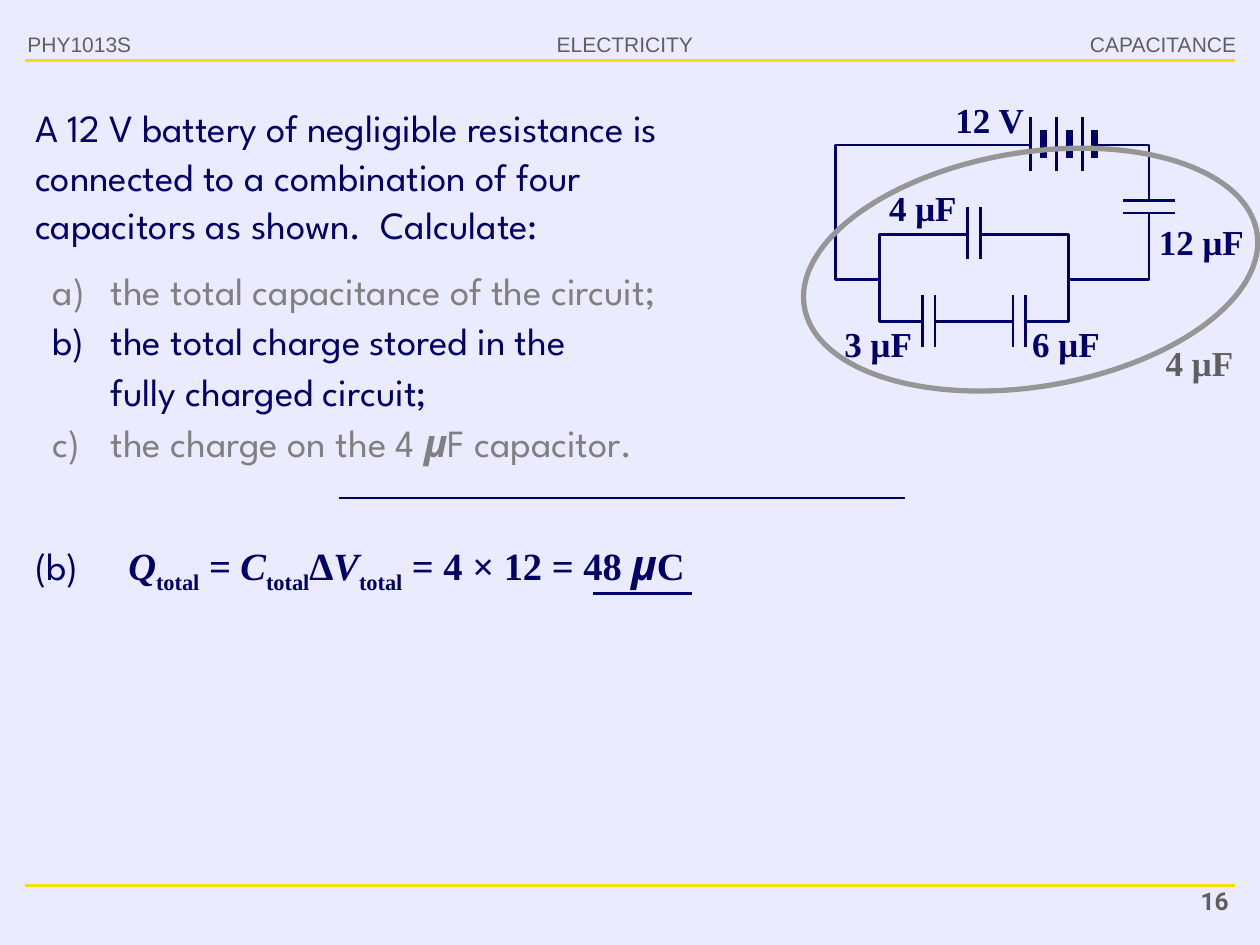
"""Build a physics slide: charge stored in a network of four capacitors."""
from lxml.etree import SubElement
from pptx import Presentation
from pptx.dml.color import RGBColor
from pptx.enum.shapes import MSO_CONNECTOR as Connector, MSO_SHAPE as Shape
from pptx.enum.text import PP_ALIGN as Align
from pptx.oxml.ns import qn
from pptx.util import Inches, Pt

COLORS = {"background": "EBEBFF", "navy": "000066", "yellow": "F8DC0E",
          "dim": "808080", "label": "5F5F5F", "ring": "969696"}
SPARTAN, TIMES = "League Spartan", "Times New Roman"

HEADERS = [("ELECTRICITY", (4.16, 0.2, 1.6, 0.3), Align.CENTER),
           ("CAPACITANCE", (8.31, 0.2, 1.6, 0.3), Align.RIGHT),
           ("PHY1013S", (0.12, 0.2, 1.6, 0.3), Align.LEFT)]
QUESTION = ("A 12 V battery of negligible resistance is connected to a "
            "combination of four capacitors as shown.  Calculate:")
DIM = {"color": "dim"}
PARTS = [
    [("the total capacitance of the circuit;", DIM)],
    [("the total charge stored in the ", {}), ("\n", {}), ("fully charged circuit;", {})],
    [("the charge on the 4\u00a0", DIM), ("μ", {"color": "dim", "bold": True, "italic": True}),
     ("F capacitor.", DIM)],
]
ITALIC, SUBSCRIPT = {"italic": True}, {"baseline": -25000}
EQUATION = [("Q", ITALIC), ("total", SUBSCRIPT), (" = C", ITALIC), ("total", SUBSCRIPT),
            ("Δ", {}), ("V", ITALIC), ("total", SUBSCRIPT), (" = 4 × 12 = 48 ", {}),
            ("μ", {"size": 24, "font": SPARTAN, "italic": True}), ("C", {})]
CIRCUIT_LABELS = [("12 μF", (9.07, 1.71, 0.93, 0.44), "navy"),
                  ("12 V", (7.51, 0.74, 0.69, 0.44), "navy"),
                  ("4 μF", (6.91, 1.44, 0.83, 0.44), "navy"),
                  ("3 μF", (6.56, 2.52, 0.82, 0.44), "navy"),
                  ("6 μF", (8.05, 2.52, 0.82, 0.44), "navy"),
                  ("4 μF", (9.11, 2.67, 0.82, 0.45), "label")]

BATTERY_LEFT, BATTERY_STEP, BATTERY_CELLS = 8.18, 0.205, 3
PLATE_GAP, PLATE_LENGTH = 0.1, 0.41
CAPACITORS = [(9.12, 1.64, "vertical"), (8.09, 2.55, "horizontal"),
              (7.73, 1.85, "horizontal"), (7.37, 2.55, "horizontal")]
WIRES = [
    [(8.19, 1.15), (6.63, 1.15), (6.63, 2.22), (6.98, 2.22), (6.98, 2.55), (7.32, 2.55)],
    [(8.7, 1.15), (9.12, 1.15), (9.12, 1.58)],
    [(9.12, 1.69), (9.12, 2.22), (8.48, 2.22), (8.48, 2.55), (8.14, 2.55)],
    [(6.98, 2.22), (6.98, 1.86), (7.67, 1.86)],
    [(8.48, 2.22), (8.48, 1.86), (7.78, 1.86)],
]
RULES = [((0.2, 0.48), (9.8, 0.48), "yellow", 1.75),
         ((0.2, 7.03), (9.8, 7.03), "yellow", 1.75),
         ((2.69, 3.95), (7.18, 3.95), "navy", 1.25),
         ((4.71, 4.71), (5.49, 4.71), "navy", 2),
         ((7.42, 2.55), (8.03, 2.55), "navy", 1.5)]


def rgb(name):
    return RGBColor.from_string(COLORS[name])


def format_run(run, size, font, color, bold=False, italic=False, baseline=None):
    run.font.size, run.font.name = Pt(size), font
    run.font.bold, run.font.italic = bold, italic
    run.font.color.rgb = rgb(color)
    if baseline:
        run.font._element.set("baseline", str(baseline))


def add_text(slide, box, paragraphs, align=Align.LEFT, spacing=1.0, margins=(0.1, 0.05),
             wrap=True, lettered=False, **style):
    frame = slide.shapes.add_textbox(*map(Inches, box)).text_frame
    frame.word_wrap = wrap
    frame.margin_left = frame.margin_right = Inches(margins[0])
    frame.margin_top = frame.margin_bottom = Inches(margins[1])
    for index, runs in enumerate(paragraphs):
        paragraph = frame.add_paragraph() if index else frame.paragraphs[0]
        paragraph.alignment, paragraph.line_spacing = align, spacing
        if lettered:
            paragraph.level = 1
            properties = paragraph._p.get_or_add_pPr()
            properties.set("marL", str(Inches(0.65)))
            properties.set("indent", str(Inches(-0.46)))
            SubElement(properties, qn("a:buFont"), typeface=style["font"])
            SubElement(properties, qn("a:buAutoNum"), type="alphaLcParenR")
        for text, changes in runs:
            if text == "\n":
                paragraph.add_line_break()
                continue
            run = paragraph.add_run()
            run.text = text
            format_run(run, **{**style, **changes})


def add_line(slide, start, end, color="navy", width=1.5):
    line = slide.shapes.add_connector(Connector.STRAIGHT, *map(Inches, (*start, *end)))
    line.line.color.rgb, line.line.width = rgb(color), Pt(width)
    SubElement(line._element.spPr, qn("a:effectLst"))


def outline(shape, color, width):
    shape.shadow.inherit = False
    shape.fill.background()
    shape.line.color.rgb, shape.line.width = rgb(color), Pt(width)


def add_wire(slide, points):
    corners = [tuple(map(Inches, point)) for point in points]
    builder = slide.shapes.build_freeform(*corners[0])
    builder.add_line_segments(corners[1:], close=False)
    outline(builder.convert_to_shape(), "navy", 1.5)


def add_capacitor(slide, x, y, direction):
    half = PLATE_LENGTH / 2
    for offset in (-PLATE_GAP / 2, PLATE_GAP / 2):
        if direction == "horizontal":
            add_line(slide, (x + offset, y - half), (x + offset, y + half))
        else:
            add_line(slide, (x - half, y + offset), (x + half, y + offset))


def add_circuit(slide):
    for text, box, color in CIRCUIT_LABELS:
        add_text(slide, box, [[(text, {})]], align=Align.CENTER, spacing=1.1,
                 margins=(0.01, 0.01), size=20, font=TIMES, color=color, bold=True)
    for cell in range(BATTERY_CELLS):
        x = BATTERY_LEFT + cell * BATTERY_STEP
        add_line(slide, (x, 0.93), (x, 1.36))
        add_line(slide, (x + 0.1, 1.03), (x + 0.1, 1.25), width=4)
    for capacitor in CAPACITORS:
        add_capacitor(slide, *capacitor)
    for points in WIRES:
        add_wire(slide, points)


def main():
    presentation = Presentation()
    presentation.slide_width, presentation.slide_height = Inches(10), Inches(7.5)
    slide = presentation.slides.add_slide(presentation.slide_layouts[6])
    slide.background.fill.solid()
    slide.background.fill.fore_color.rgb = rgb("background")

    for text, box, align in HEADERS:
        add_text(slide, box, [[(text, {})]], align=align, size=12, font="Arial", color="label")
    add_text(slide, (8.82, 6.98, 1.03, 0.37), [[("16", {})]], align=Align.RIGHT,
             size=14, font="Roboto", color="label", bold=True)

    body = {"size": 22, "font": SPARTAN, "color": "navy"}
    add_text(slide, (0.18, 0.76, 5.84, 1.26), [[(QUESTION, {})]], spacing=1.05, **body)
    add_text(slide, (0.13, 2.03, 9.59, 1.71), PARTS, spacing=1.1, lettered=True, **body)
    add_text(slide, (0.18, 4.22, 0.6, 0.5), [[("(b)", {})]], spacing=1.1, wrap=False, **body)
    add_text(slide, (0.92, 4.18, 4.78, 0.54), [EQUATION], spacing=1.1, wrap=False,
             size=22, font=TIMES, color="navy", bold=True)

    add_circuit(slide)
    for rule in RULES:
        add_line(slide, *rule)
    ring = slide.shapes.add_shape(Shape.OVAL, *map(Inches, (6.36, 1.21, 3.64, 1.86)))
    ring.rotation = -9.3
    outline(ring, "ring", 3)
    presentation.save("out.pptx")


if __name__ == "__main__":
    main()
